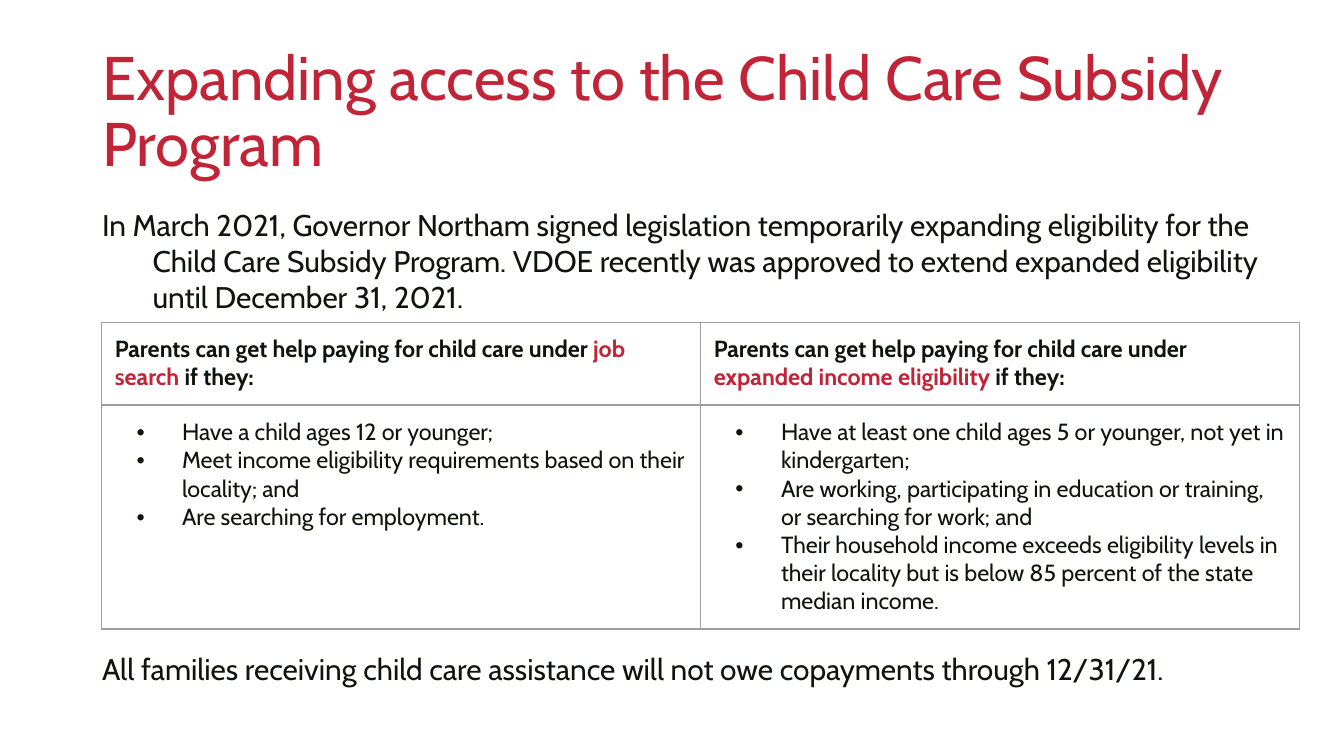
import dataclasses

import pptx
import pptx.dml.color
import pptx.enum.text
import pptx.oxml
import pptx.oxml.ns
import pptx.util

Cm = pptx.util.Cm
Pt = pptx.util.Pt


@dataclasses.dataclass(frozen=True)
class Theme:
    font: str = "Cabin"
    accent: str = "C12436"
    ink: str = "0F150D"
    border: str = "9E9E9E"
    title_size: float = 33
    body_size: float = 16
    table_size: float = 12.5
    border_width: float = 0.75


def set_attributes(target, values):
    for name, value in values.items():
        setattr(target, name, value)


def drawing_element(tag, attributes="", content=""):
    namespace = pptx.oxml.ns.nsdecls("a")
    return pptx.oxml.parse_xml(f"<a:{tag} {namespace} {attributes}>{content}</a:{tag}>")


class SlideBuilder:
    def __init__(self, slide, theme):
        self.slide = slide
        self.theme = theme

    def add_run(self, paragraph, text, size, color, bold=False):
        run = paragraph.add_run()
        run.text = text
        set_attributes(run.font, {"name": self.theme.font, "size": Pt(size), "bold": bold})
        run.font.color.rgb = pptx.dml.color.RGBColor.from_string(color)

    def place(self, shape, box, anchor):
        set_attributes(shape, dict(zip(("left", "top", "width", "height"), map(Cm, box))))
        set_attributes(shape.text_frame, {
            "margin_left": Cm(0.18), "margin_right": Cm(0.18),
            "margin_top": Cm(0.1), "margin_bottom": Cm(0.1),
            "word_wrap": True, "vertical_anchor": anchor,
            "auto_size": pptx.enum.text.MSO_AUTO_SIZE.NONE,
        })

    def title(self, text, box):
        shape = self.slide.shapes.title
        self.place(shape, box, pptx.enum.text.MSO_ANCHOR.MIDDLE)
        paragraph = shape.text_frame.paragraphs[0]
        set_attributes(paragraph, {"alignment": pptx.enum.text.PP_ALIGN.LEFT, "line_spacing": 0.9})
        self.add_run(paragraph, text, self.theme.title_size, self.theme.accent)

    def body(self, texts, box, gap):
        shape = self.slide.placeholders[1]
        self.place(shape, box, pptx.enum.text.MSO_ANCHOR.TOP)
        frame = shape.text_frame
        for index, text in enumerate(texts):
            paragraph = frame.add_paragraph() if index else frame.paragraphs[0]
            properties = paragraph._p.get_or_add_pPr()
            set_attributes(properties, {"marL": 0, "indent": 0})
            properties.append(drawing_element("buNone"))
            set_attributes(paragraph, {"space_before": Pt(gap if index else 0), "line_spacing": 1.0})
            self.add_run(paragraph, text, self.theme.body_size, self.theme.ink)

    def bullet(self, paragraph):
        properties = paragraph._p.get_or_add_pPr()
        properties.set("marL", str(Cm(1.27)))
        properties.set("indent", str(Cm(-0.86)))
        properties.append(drawing_element("buClr", "", f'<a:srgbClr val="{self.theme.ink}"/>'))
        properties.append(drawing_element("buFont", 'typeface="Arial"'))
        properties.append(drawing_element("buChar", 'char="•"'))

    def style_cell(self, cell):
        set_attributes(cell, {f"margin_{side}": Cm(0.25) for side in ("left", "right", "top", "bottom")})
        cell.fill.background()
        properties = cell._tc.get_or_add_tcPr()
        fill = f'<a:solidFill><a:srgbClr val="{self.theme.border}"/></a:solidFill>'
        width = Pt(self.theme.border_width)
        for index, tag in enumerate(("lnL", "lnR", "lnT", "lnB")):
            properties.insert(index, drawing_element(tag, f'w="{width}"', fill))

    def table(self, columns, left, top, column_width, row_heights):
        shape = self.slide.shapes.add_table(
            len(row_heights), len(columns), Cm(left), Cm(top),
            Cm(column_width * len(columns)), Cm(sum(row_heights)))
        table = shape.table
        set_attributes(table, {"first_row": False, "horz_banding": False})
        for row, height in zip(table.rows, row_heights):
            row.height = Cm(height)
        for index, (highlight, items) in enumerate(columns):
            table.columns[index].width = Cm(column_width)
            header, details = table.cell(0, index), table.cell(1, index)
            for cell in (header, details):
                self.style_cell(cell)
            heading = header.text_frame.paragraphs[0]
            for text, color in (
                ("Parents can get help paying for child care under ", self.theme.ink),
                (highlight, self.theme.accent),
                (" if they:", self.theme.ink),
            ):
                self.add_run(heading, text, self.theme.table_size, color, bold=True)
            frame = details.text_frame
            for position, item in enumerate(items):
                paragraph = frame.add_paragraph() if position else frame.paragraphs[0]
                self.bullet(paragraph)
                self.add_run(paragraph, item, self.theme.table_size, self.theme.ink)


def main():
    presentation = pptx.Presentation()
    set_attributes(presentation, {"slide_width": Cm(25.4), "slide_height": Cm(14.29)})
    slide = presentation.slides.add_slide(presentation.slide_layouts[1])
    builder = SlideBuilder(slide, Theme())
    builder.title("Expanding access to the Child Care Subsidy Program", (1.75, 0.76, 21.9, 2.77))
    builder.body([
        "In March 2021, Governor Northam signed legislation temporarily expanding eligibility for the "
        "Child Care Subsidy Program. VDOE recently was approved to extend expanded eligibility until "
        "December 31, 2021.",
        "All families receiving child care assistance will not owe copayments through 12/31/21.",
    ], (1.75, 3.81, 22.94, 9.07), gap=180)
    builder.table([
        ("job search", [
            "Have a child ages 12 or younger;",
            "Meet income eligibility requirements based on their locality; and",
            "Are searching for employment.",
        ]),
        ("expanded income eligibility", [
            "Have at least one child ages 5 or younger, not yet in kindergarten;",
            "Are working, participating in education or training, or searching for work; and",
            "Their household income exceeds eligibility levels in their locality but is below "
            "85 percent of the state median income.",
        ]),
    ], left=1.92, top=6.09, column_width=11.32, row_heights=(1.37, 4.22))
    presentation.save("out.pptx")


if __name__ == "__main__":
    main()
